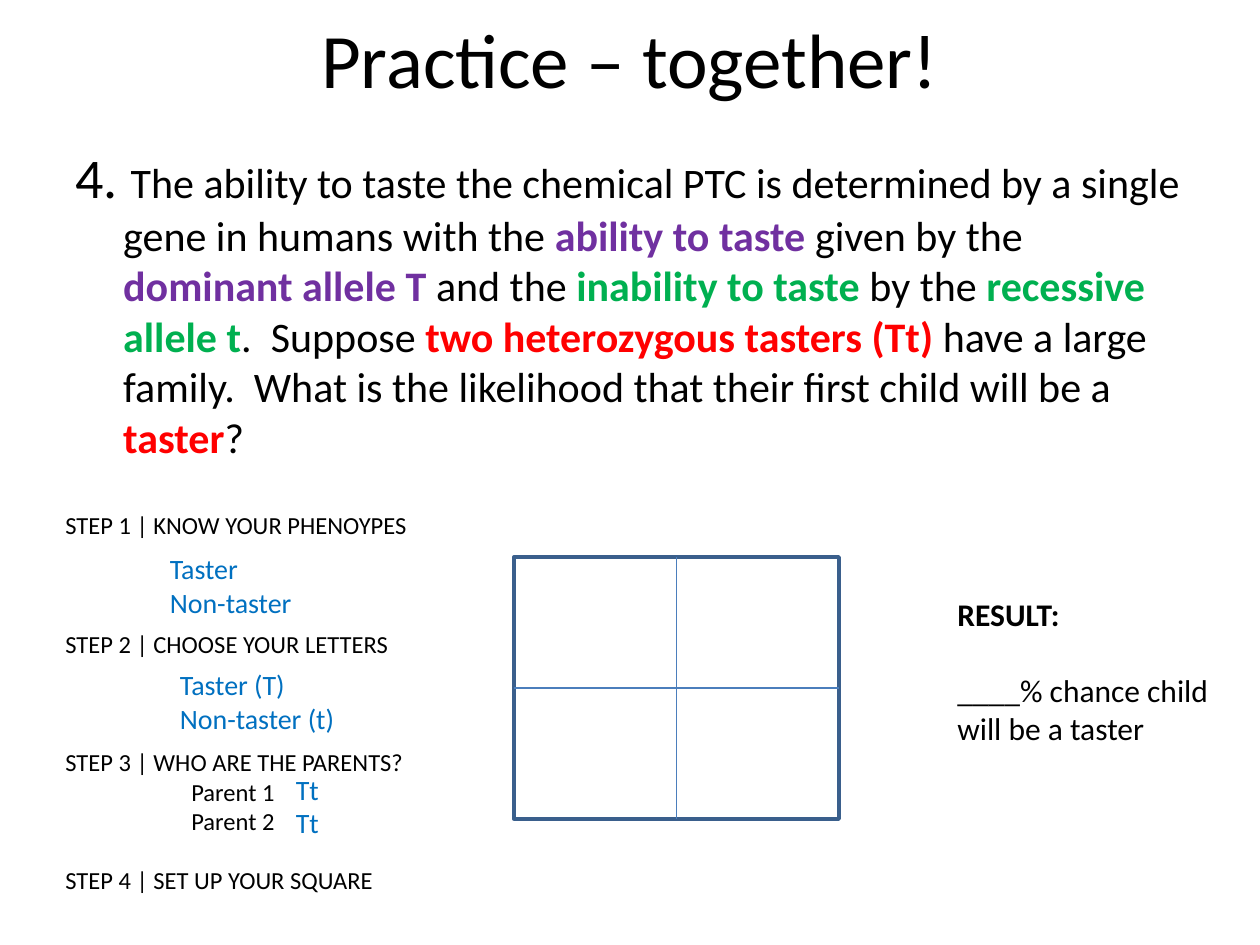
from dataclasses import dataclass

import pptx
import pptx.dml.color
import pptx.enum.shapes
import pptx.enum.text
import pptx.oxml.ns
import pptx.util
from lxml import etree
from pptx.dml.color import RGBColor
from pptx.util import Inches, Pt

BLACK = RGBColor(0x00, 0x00, 0x00)
WHITE = RGBColor(0xFF, 0xFF, 0xFF)
PURPLE = RGBColor(0x70, 0x30, 0xA0)
GREEN = RGBColor(0x00, 0xB0, 0x50)
RED = RGBColor(0xFF, 0x00, 0x00)
BLUE = RGBColor(0x00, 0x70, 0xC0)
EDGE = RGBColor(0x3A, 0x5F, 0x8C)
INNER = RGBColor(0x4B, 0x7E, 0xBC)
FONT = "Calibri"


@dataclass
class Span:
    text: str
    color: RGBColor = BLACK
    size: float | None = None


@dataclass
class Line:
    spans: list[Span]
    before: float = 0
    left: float = 0
    first: float = 0


@dataclass
class Box:
    left: float
    top: float
    width: float
    height: float
    size: float
    lines: list[Line]
    title: bool = False


def plain(text: str, color: RGBColor = BLACK, **gaps: float) -> Line:
    return Line([Span(text, color)], **gaps)


def draw_box(slide, box: Box) -> None:
    shape = slide.shapes.add_textbox(
        Inches(box.left), Inches(box.top), Inches(box.width), Inches(box.height))
    frame = shape.text_frame
    frame.word_wrap = True
    if box.title:
        frame.vertical_anchor = pptx.enum.text.MSO_ANCHOR.MIDDLE
    for i, line in enumerate(box.lines):
        para = frame.add_paragraph() if i else frame.paragraphs[0]
        para.space_before = Pt(line.before)
        if box.title:
            para.alignment = pptx.enum.text.PP_ALIGN.CENTER
        if line.left:
            props = para._p.get_or_add_pPr()
            props.set("marL", str(Inches(line.left)))
            props.set("indent", str(Inches(line.first)))
        for span in line.spans:
            run = para.add_run()
            run.text = span.text
            run.font.name = FONT
            run.font.size = Pt(span.size or box.size)
            run.font.color.rgb = span.color
            run.font.bold = (span.color in (PURPLE, GREEN, RED)
                             or span.text == "RESULT:")


def draw_split(slide, square, start: int, end: int) -> None:
    """Join the middles of two opposite sides of the square."""
    line = slide.shapes.add_connector(
        pptx.enum.shapes.MSO_CONNECTOR.STRAIGHT, 0, 0, 0, 0)
    line.begin_connect(square, start)
    line.end_connect(square, end)
    line.line.color.rgb = INNER
    line.line.width = Pt(0.75)
    etree.SubElement(line._element.spPr, pptx.oxml.ns.qn("a:effectLst"))


def draw_square(slide) -> None:
    square = slide.shapes.add_shape(
        pptx.enum.shapes.MSO_SHAPE.RECTANGLE,
        Inches(4.08), Inches(4.42), Inches(2.58), Inches(2.08))
    square.shadow.inherit = False
    square.fill.solid()
    square.fill.fore_color.rgb = WHITE
    square.line.color.rgb = EDGE
    square.line.width = Pt(2)
    draw_split(slide, square, 0, 2)
    draw_split(slide, square, 1, 3)


TITLE = Box(0.5, -0.17, 9, 1.25, 44, [plain("Practice – together!")], title=True)

TASK = Box(0.5, 1.08, 9, 4.95, 24, [Line([
    Span("4. ", size=32),
    Span("The ability to taste the chemical PTC is determined by a single "
         "gene in humans with the "),
    Span("ability to taste ", PURPLE),
    Span("given by the "),
    Span("dominant allele T ", PURPLE),
    Span("and the "),
    Span("inability to taste", GREEN),
    Span(" by the "),
    Span("recessive allele t", GREEN),
    Span(".  Suppose "),
    Span("two heterozygous tasters (Tt) ", RED),
    Span("have a large family.  What is the likelihood that their first "
         "child will be a "),
    Span("taster", RED),
    Span("?"),
], left=0.38, first=-0.38)])

# Gaps between steps are whole lines of 14 pt text
ROW = 17
STEPS = Box(0.42, 4, 4.58, 3.16, 14, [
    plain("STEP 1 | KNOW YOUR PHENOYPES"),
    plain("STEP 2 | CHOOSE YOUR LETTERS", before=3 * ROW),
    plain("STEP 3 | WHO ARE THE PARENTS?", before=3 * ROW),
    plain("Parent 1", left=1),
    plain("Parent 2", left=1),
    plain("STEP 4 | SET UP YOUR SQUARE", before=ROW),
])

ANSWERS = [
    Box(left, top, 2.33, 0.64, 16, [plain(text, BLUE) for text in pair])
    for left, top, pair in [
        (1.25, 4.33, ("Taster", "Non-taster")),
        (1.33, 5.25, ("Taster (T)", "Non-taster (t)")),
        (2.25, 6.08, ("Tt", "Tt")),
    ]
]

RESULT = Box(7.5, 4.67, 2.33, 1.31, 18, [
    plain("RESULT:"),
    plain("____% chance child will be a taster", before=22),
])


def main() -> None:
    deck = pptx.Presentation()
    deck.slide_width, deck.slide_height = Inches(10), Inches(7.5)
    slide = deck.slides.add_slide(deck.slide_layouts[6])
    # Question, steps and answers
    for box in [TITLE, TASK, STEPS, *ANSWERS]:
        draw_box(slide, box)
    # Punnett square and result
    draw_square(slide)
    draw_box(slide, RESULT)
    deck.save("out.pptx")


if __name__ == "__main__":
    main()
